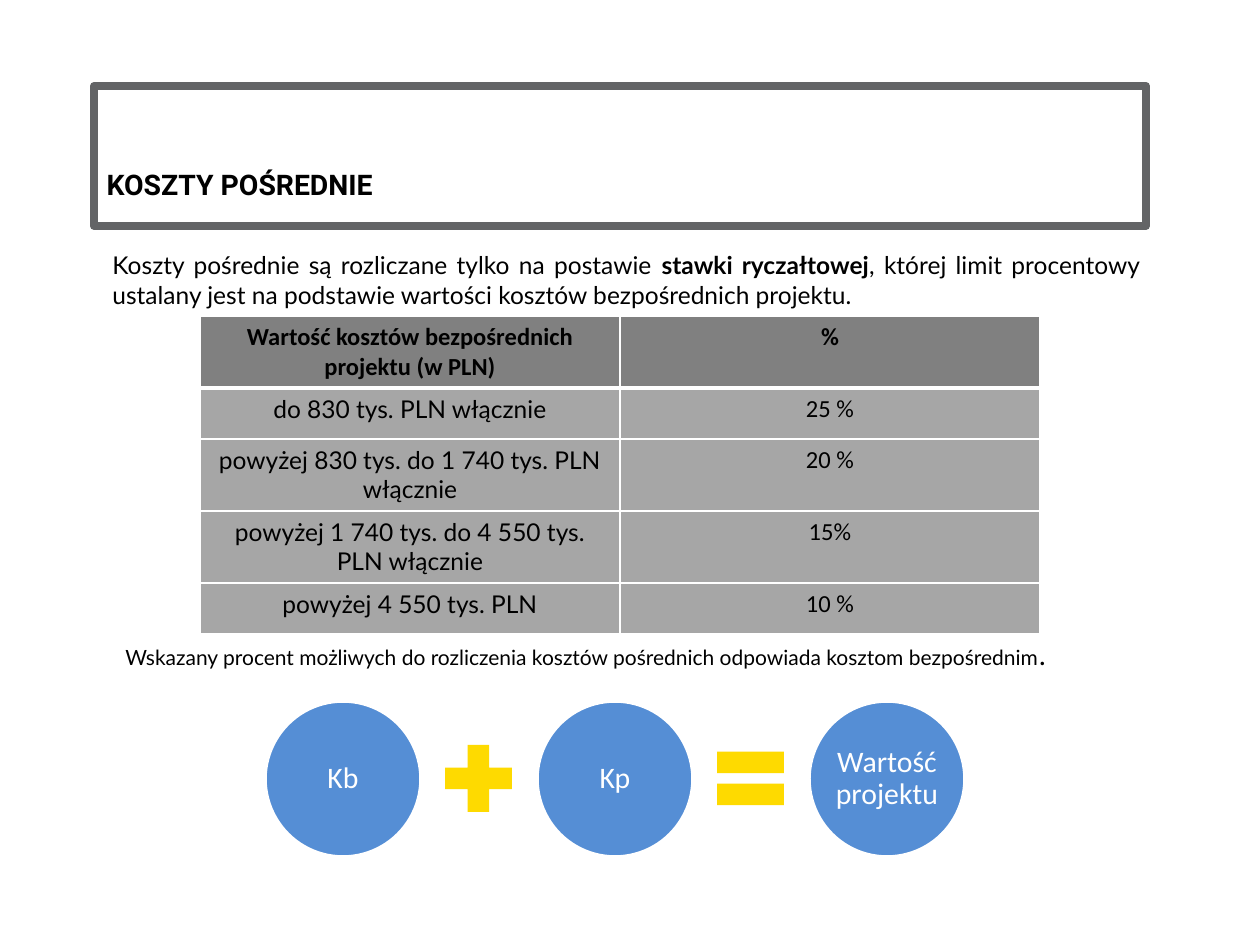
from lxml import etree
from pptx import Presentation
from pptx.dml.color import RGBColor
from pptx.enum.shapes import MSO_SHAPE
from pptx.enum.text import MSO_ANCHOR, MSO_AUTO_SIZE, PP_ALIGN
from pptx.oxml.ns import qn
from pptx.util import Pt

SCALE = 914400 / 126
COLORS = {"text": "000000", "white": "FFFFFF", "frame": "636466", "header": "808080",
          "row": "A6A6A6", "circle": "558ED5", "operator": "FEDA00"}


def px(*lengths):
    return [round(length * SCALE) for length in lengths]


def write(frame, *runs, font="Lato", size=14, color="text", bold=False,
          align=PP_ALIGN.CENTER, anchor=MSO_ANCHOR.TOP, spacing=None, baseline=None):
    frame.word_wrap = True
    frame.vertical_anchor = anchor
    paragraph = frame.paragraphs[0]
    paragraph.alignment = align
    paragraph.line_spacing = spacing
    for text, changes in runs:
        run = paragraph.add_run()
        run.text = text
        run.font.name = font
        run.font.size = Pt(changes.get("size", size))
        run.font.bold = changes.get("bold", bold)
        run.font.color.rgb = RGBColor.from_string(COLORS[color])
        if baseline:
            run.font._element.set("baseline", str(baseline * 1000))


prs = Presentation()
prs.slide_width, prs.slide_height = px(1260, 945)
slide = prs.slides.add_slide(prs.slide_layouts[5])
shapes = slide.shapes

title = shapes.title
title.left, title.top, title.width, title.height = px(94, 86, 1052, 140)
title.line.color.rgb = RGBColor.from_string(COLORS["frame"])
title.line.width = Pt(4.5)
title.text_frame.auto_size = MSO_AUTO_SIZE.NONE
write(title.text_frame, ("KOSZTY POŚREDNIE", {}), font="Roboto", size=28, bold=True,
      align=PP_ALIGN.LEFT, anchor=MSO_ANCHOR.BOTTOM, baseline=30)

intro = shapes.add_textbox(*px(100, 244, 1052, 72))
write(intro.text_frame,
      ("Koszty pośrednie są rozliczane tylko na postawie ", {}),
      ("stawki ryczałtowej", {"bold": True}),
      (", której limit procentowy ustalany jest na podstawie wartości kosztów "
       "bezpośrednich projektu.", {}),
      align=PP_ALIGN.JUSTIFY)

rates = [
    ("Wartość kosztów bezpośrednich projektu (w PLN)", "%", 72),
    ("do 830 tys. PLN włącznie", "25 %", 51),
    ("powyżej 830 tys. do 1 740 tys. PLN włącznie", "20 %", 72),
    ("powyżej 1 740 tys. do 4 550 tys. PLN włącznie", "15%", 72),
    ("powyżej 4 550 tys. PLN", "10 %", 51),
]
rate_table = shapes.add_table(len(rates), 2, *px(200, 316, 840, 318)).table
for column in rate_table.columns:
    column.width = px(420)[0]
for row, (*texts, height) in enumerate(rates):
    rate_table.rows[row].height = px(height)[0]
    for col, text in enumerate(texts):
        cell = rate_table.cell(row, col)
        header = row == 0
        write(cell.text_frame, (text, {}), bold=header,
              font="Calibri" if header or col else "Lato")
        properties = cell._tc.get_or_add_tcPr()
        for side in ("L", "R", "T", "B"):
            thick = (header and side == "B") or (row == 1 and side == "T")
            border = etree.SubElement(properties, qn(f"a:ln{side}"),
                                      w=str(Pt(3 if thick else 1)))
            fill = etree.SubElement(border, qn("a:solidFill"))
            etree.SubElement(fill, qn("a:srgbClr"), val=COLORS["white"])
        cell.fill.solid()
        cell.fill.fore_color.rgb = RGBColor.from_string(COLORS["header" if header else "row"])

note = shapes.add_textbox(*px(113, 631, 1036, 47))
write(note.text_frame,
      ("Wskazany procent możliwych do rozliczenia kosztów pośrednich odpowiada "
       "kosztom bezpośrednim", {}),
      (".", {"size": 16}),
      size=12, align=PP_ALIGN.JUSTIFY)

equation = [("Kb", MSO_SHAPE.MATH_PLUS), ("Kp", MSO_SHAPE.MATH_EQUAL),
            ("Wartość projektu", None)]
for index, (term, sign) in enumerate(equation):
    left = 265 + 272 * index
    circle = shapes.add_shape(MSO_SHAPE.OVAL, *px(left, 701, 156, 156))
    circle.shadow.inherit = False
    circle.fill.solid()
    circle.fill.fore_color.rgb = RGBColor.from_string(COLORS["circle"])
    circle.line.color.rgb = RGBColor.from_string(COLORS["white"])
    circle.line.width = Pt(2)
    frame = circle.text_frame
    frame.margin_left, frame.margin_top, frame.margin_right, frame.margin_bottom = px(3, 3, 3, 3)
    write(frame, (term, {}), font="Calibri", size=17, color="white",
          anchor=MSO_ANCHOR.MIDDLE, spacing=0.9)
    if sign:
        operator = shapes.add_shape(sign, *px(left + 168, 733, 91, 91))
        operator.shadow.inherit = False
        operator.fill.solid()
        operator.fill.fore_color.rgb = RGBColor.from_string(COLORS["operator"])
        operator.line.fill.background()

prs.save("out.pptx")
